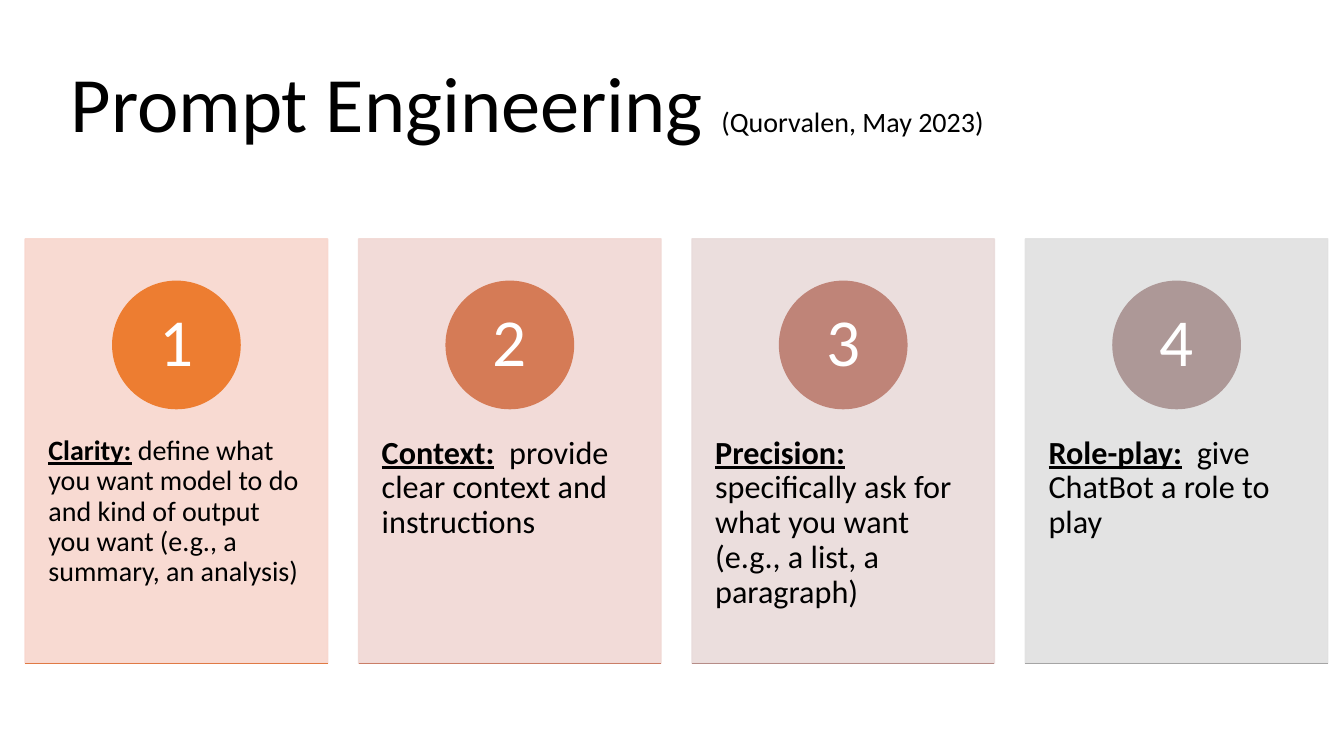
from lxml import etree
from pptx import Presentation
from pptx.dml.color import RGBColor
from pptx.enum.shapes import MSO_CONNECTOR, MSO_SHAPE
from pptx.enum.text import MSO_ANCHOR, MSO_AUTO_SIZE, PP_ALIGN
from pptx.oxml.ns import qn
from pptx.util import Inches, Pt

RECTANGLE, OVAL = MSO_SHAPE.RECTANGLE, MSO_SHAPE.OVAL
STRAIGHT = MSO_CONNECTOR.STRAIGHT
TOP, MIDDLE = MSO_ANCHOR.TOP, MSO_ANCHOR.MIDDLE
LEFT, CENTER = PP_ALIGN.LEFT, PP_ALIGN.CENTER
NO_AUTOFIT = MSO_AUTO_SIZE.NONE

SLIDE_W, SLIDE_H = 13.33, 7.5
TITLE_ONLY = 5
FONT = "Calibri"
BLACK = RGBColor(0x00, 0x00, 0x00)
WHITE = RGBColor(0xFF, 0xFF, 0xFF)
PANEL_OPACITY = 90

FIRST_LEFT, LAST_LEFT = 0.25, 10.17
CARD_TOP, CARD_W, CARD_H = 2.37, 3, 4.21

TIPS = [
    ("Clarity:", " define what you want model to do and kind of output you want "
     "(e.g., a summary, an analysis)", 20,
     RGBColor(0xF8, 0xD7, 0xCE), RGBColor(0xED, 0x7D, 0x31), RGBColor(0xE0, 0x7A, 0x44)),
    ("Context:", "  provide clear context and instructions", 23,
     RGBColor(0xF1, 0xD8, 0xD4), RGBColor(0xD5, 0x7B, 0x56), RGBColor(0xCA, 0x7E, 0x67)),
    ("Precision:", " specifically ask for what you want (e.g., a list, a paragraph)", 23,
     RGBColor(0xE9, 0xDB, 0xDA), RGBColor(0xBF, 0x84, 0x78), RGBColor(0xB6, 0x8D, 0x88)),
    ("Role-play:", "  give ChatBot a role to play", 23,
     RGBColor(0xE1, 0xE1, 0xE1), RGBColor(0xAD, 0x98, 0x97), RGBColor(0xA5, 0xA5, 0xA5)),
]


def inches(*lengths):
    """Convert a box given in inches to slide units."""
    return [Inches(length) for length in lengths]


def add_run(paragraph, text, size, color=BLACK, emphasis=False):
    """Append one formatted run to a paragraph."""
    run = paragraph.add_run()
    run.text = text
    run.font.name = FONT
    run.font.size = Pt(size)
    run.font.color.rgb = color
    run.font.bold = emphasis
    run.font.underline = emphasis


def prepare_text(frame, anchor, align, side=0.1, edge=0.05):
    """Set up wrapping, insets and alignment, and return the first paragraph."""
    frame.word_wrap = True
    frame.auto_size = NO_AUTOFIT
    frame.vertical_anchor = anchor
    frame.margin_left = frame.margin_right = Inches(side)
    frame.margin_top = frame.margin_bottom = Inches(edge)
    paragraph = frame.paragraphs[0]
    paragraph.alignment = align
    paragraph.line_spacing = 0.9
    return paragraph


def add_solid(slide, preset, box, color):
    """Add a shape whose fill and outline share one colour."""
    solid = slide.shapes.add_shape(preset, *inches(*box))
    solid.shadow.inherit = False
    solid.fill.solid()
    solid.fill.fore_color.rgb = color
    solid.line.color.rgb = color
    solid.line.width = Pt(1)
    return solid


def set_opacity(solid, percent):
    """Make the fill and outline of a shape partly transparent."""
    for color in solid.element.spPr.iter(qn("a:srgbClr")):
        etree.SubElement(color, qn("a:alpha")).set("val", str(percent * 1000))


def add_title(slide, left, top, width, height):
    """Place the heading and its citation in the title placeholder."""
    heading = slide.shapes.title
    heading.left, heading.top, heading.width, heading.height = inches(left, top, width, height)
    paragraph = prepare_text(heading.text_frame, TOP, LEFT)
    add_run(paragraph, "Prompt Engineering ", 56)
    add_run(paragraph, "(Quorvalen, May 2023)", 20)


def add_card(slide, left, top, width, height, number, tip):
    """Draw one numbered tip card inside the given box."""
    term, advice, size, panel_color, badge_color, rule_color = tip
    panel = add_solid(slide, RECTANGLE, (left, top, width, height), panel_color)
    set_opacity(panel, PANEL_OPACITY)

    advice_box = slide.shapes.add_textbox(
        *inches(left, top + 0.38 * height, width, 0.6 * height))
    paragraph = prepare_text(advice_box.text_frame, TOP, LEFT, 0.23, 0.36)
    add_run(paragraph, term, size, emphasis=True)
    add_run(paragraph, advice, size)

    diameter = 0.3 * height
    badge = add_solid(slide, OVAL, (left + (width - diameter) / 2, top + 0.1 * height,
                                    diameter, diameter), badge_color)
    paragraph = prepare_text(badge.text_frame, MIDDLE, CENTER, 0.1, 0.01)
    add_run(paragraph, str(number), 48, WHITE)

    bottom = top + height
    rule = slide.shapes.add_connector(STRAIGHT, *inches(left, bottom, left + width, bottom))
    rule.line.color.rgb = rule_color
    rule.line.width = Pt(1)
    etree.SubElement(rule.element.spPr, qn("a:effectLst"))


def main():
    """Build the slide and save it."""
    deck = Presentation()
    deck.slide_width, deck.slide_height = inches(SLIDE_W, SLIDE_H)
    slide = deck.slides.add_slide(deck.slide_layouts[TITLE_ONLY])
    add_title(slide, 0.6, 0.59, 12.11, 1.98)
    pitch = (LAST_LEFT - FIRST_LEFT) / (len(TIPS) - 1)
    for column, tip in enumerate(TIPS):
        add_card(slide, FIRST_LEFT + column * pitch, CARD_TOP, CARD_W, CARD_H, column + 1, tip)
    deck.save("out.pptx")


if __name__ == "__main__":
    main()
